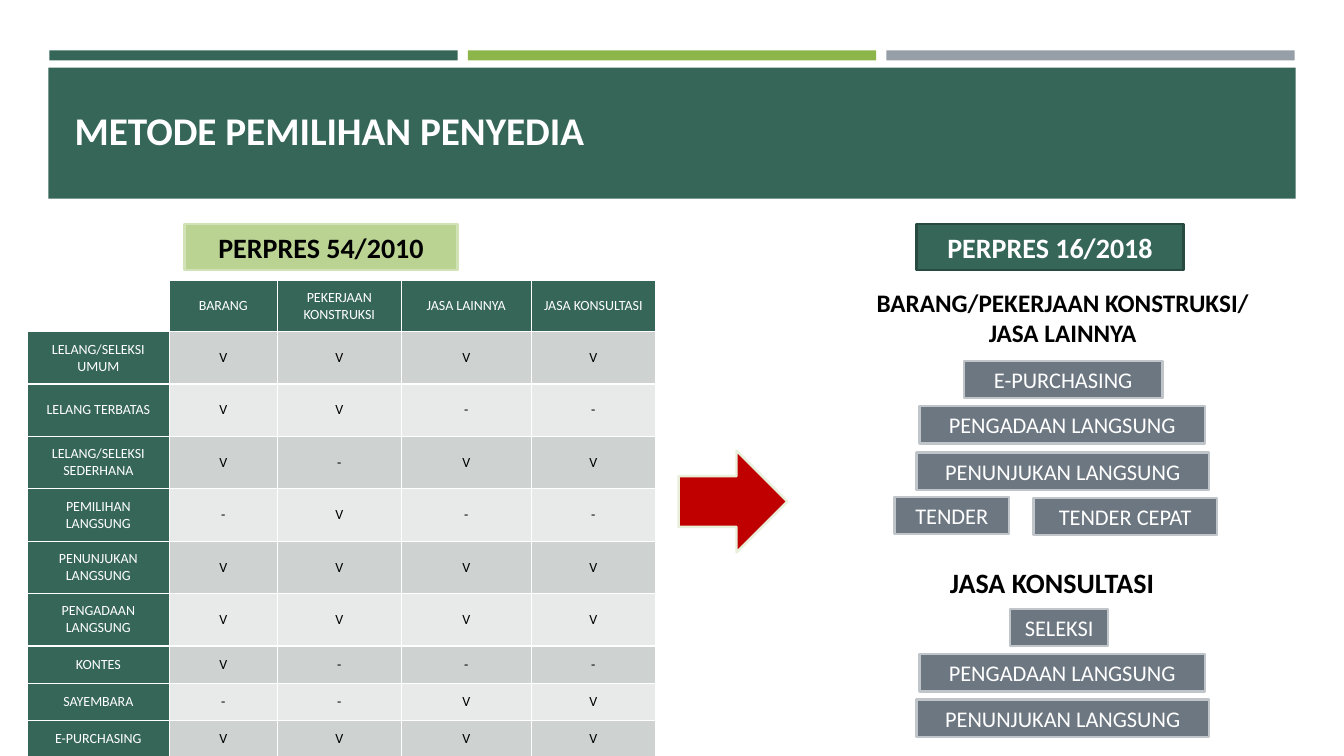
from typing import NamedTuple

from pptx import Presentation
from pptx.dml.color import RGBColor
from pptx.enum.shapes import MSO_SHAPE as Preset
from pptx.enum.text import MSO_ANCHOR as Anchor, PP_ALIGN as Align
from pptx.util import Emu, Pt

PX = 9144  # one hundred px to the inch
FONT = "Calibri"
GREEN, LIME, GREY = "366658", "8CB64A", "969FA7"
SLATE, SLATE_EDGE = "6C7781", "C0C5CA"
WHITE, BLACK = "FFFFFF", "000000"
ROW_TINTS = ("CED3D1", "E8EAEA")
METHOD_HEIGHT = 37


class Box(NamedTuple):
    left: int
    top: int
    width: int
    height: int


class Style(NamedTuple):
    fill: str
    edge: str | None = None
    ink: str = WHITE
    size: int = 16
    bold: bool = False


class Label(NamedTuple):
    text: str
    box: Box
    style: Style


class Method(NamedTuple):
    text: str
    left: int
    top: int
    width: int


class Heading(NamedTuple):
    lines: tuple[str, ...]
    box: Box
    size: int


BANDS = [
    (Box(49, 50, 405, 10), GREEN),
    (Box(464, 50, 405, 10), LIME),
    (Box(879, 50, 405, 10), GREY),
    (Box(48, 67, 1237, 130), GREEN),
]
REGULATIONS = [
    Label("PERPRES 54/2010", Box(183, 222, 271, 46),
          Style("BAD392", "D1E2B7", BLACK, 20, True)),
    Label("PERPRES 16/2018", Box(909, 222, 265, 46),
          Style(GREEN, "284B41", WHITE, 20, True)),
]
HEADINGS = [
    Heading(("BARANG/PEKERJAAN KONSTRUKSI/", "JASA LAINNYA"), Box(813, 280, 482, 71), 18),
    Heading(("JASA KONSULTASI",), Box(902, 556, 283, 44), 20),
]
METHODS = [
    Method("E-PURCHASING", 956, 358, 197),
    Method("PENGADAAN LANGSUNG", 912, 403, 283),
    Method("PENUNJUKAN LANGSUNG", 909, 449, 290),
    Method("TENDER", 887, 493, 114),
    Method("TENDER CEPAT", 1025, 494, 182),
    Method("SELEKSI", 1002, 604, 97),
    Method("PENGADAAN LANGSUNG", 912, 649, 283),
    Method("PENUNJUKAN LANGSUNG", 909, 694, 290),
]
TABLE_BOX = Box(27, 278, 623, 472)
COLUMN_WIDTHS = [141, 107, 123, 129, 123]
ROW_HEIGHTS = [51] + [52] * 6 + [37] * 3
PROCUREMENT_TYPES = ["", "BARANG", "PEKERJAAN KONSTRUKSI", "JASA LAINNYA", "JASA KONSULTASI"]
AVAILABILITY = {
    "LELANG/SELEKSI UMUM": "VVVV",
    "LELANG TERBATAS": "VV--",
    "LELANG/SELEKSI SEDERHANA": "V-VV",
    "PEMILIHAN LANGSUNG": "-V--",
    "PENUNJUKAN LANGSUNG": "VVVV",
    "PENGADAAN LANGSUNG": "VVVV",
    "KONTES": "V---",
    "SAYEMBARA": "--VV",
    "E-PURCHASING": "VVVV",
}


def colour(value: str) -> RGBColor:
    return RGBColor.from_string(value)


def emu(box: Box) -> list[Emu]:
    return [Emu(length * PX) for length in box]


def write(para, text: str, size: int, ink: str, bold: bool = False,
          align: Align = Align.CENTER) -> None:
    para.alignment = align
    span = para.add_run()
    span.text = text
    span.font.name = FONT
    span.font.size = Pt(size)
    span.font.bold = bold
    span.font.color.rgb = colour(ink)


def draw_shape(page, box: Box, style: Style, preset: Preset = Preset.RECTANGLE):
    shape = page.shapes.add_shape(preset, *emu(box))
    shape.shadow.inherit = False
    shape.fill.solid()
    shape.fill.fore_color.rgb = colour(style.fill)
    if style.edge:
        shape.line.color.rgb = colour(style.edge)
        shape.line.width = Pt(1.75)
    else:
        shape.line.fill.background()
    return shape


def draw_label(page, label: Label) -> None:
    style = label.style
    frame = draw_shape(page, label.box, style).text_frame
    frame.vertical_anchor = Anchor.MIDDLE
    frame.word_wrap = False
    write(frame.paragraphs[0], label.text, style.size, style.ink, style.bold)


def draw_heading(page, heading: Heading) -> None:
    frame = page.shapes.add_textbox(*emu(heading.box)).text_frame
    frame.word_wrap = False
    for index, line in enumerate(heading.lines):
        para = frame.add_paragraph() if index else frame.paragraphs[0]
        write(para, line, heading.size, BLACK, True)


def place_title(page, text: str) -> None:
    """Format the title and lift it in front of the header bands."""
    title = page.shapes.title
    title.left, title.top, title.width, title.height = emu(Box(64, 77, 1206, 80))
    page.shapes[-1].element.addnext(title.element)
    frame = title.text_frame
    frame.vertical_anchor = Anchor.BOTTOM
    write(frame.paragraphs[0], text, 28, WHITE, True, Align.LEFT)


def draw_table(page) -> None:
    rows = [PROCUREMENT_TYPES] + [[name, *marks] for name, marks in AVAILABILITY.items()]
    table = page.shapes.add_table(len(rows), len(COLUMN_WIDTHS), *emu(TABLE_BOX)).table
    table.first_col = True
    for column, width in zip(table.columns, COLUMN_WIDTHS):
        column.width = Emu(width * PX)
    for row, height in zip(table.rows, ROW_HEIGHTS):
        row.height = Emu(height * PX)
    for r, texts in enumerate(rows):
        for c, text in enumerate(texts):
            cell = table.cell(r, c)
            if not text:
                cell.fill.background()
                continue
            is_header = r == 0 or c == 0
            cell.fill.solid()
            cell.fill.fore_color.rgb = colour(GREEN if is_header else ROW_TINTS[(r - 1) % 2])
            cell.vertical_anchor = Anchor.MIDDLE
            write(cell.text_frame.paragraphs[0], text, 10, WHITE if is_header else BLACK)


def main() -> None:
    deck = Presentation()
    deck.slide_width, deck.slide_height = Emu(1333 * PX), Emu(750 * PX)
    page = deck.slides.add_slide(deck.slide_layouts[5])
    for box, fill in BANDS:
        draw_shape(page, box, Style(fill))
    place_title(page, "METODE PEMILIHAN PENYEDIA")
    for label in REGULATIONS:
        draw_label(page, label)
    draw_table(page)
    draw_shape(page, Box(673, 447, 108, 101), Style("C00000", "E8F0DB"), Preset.RIGHT_ARROW)
    for heading in HEADINGS:
        draw_heading(page, heading)
    for text, left, top, width in METHODS:
        box = Box(left, top, width, METHOD_HEIGHT)
        draw_label(page, Label(text, box, Style(SLATE, SLATE_EDGE)))
    deck.save("out.pptx")


if __name__ == "__main__":
    main()
